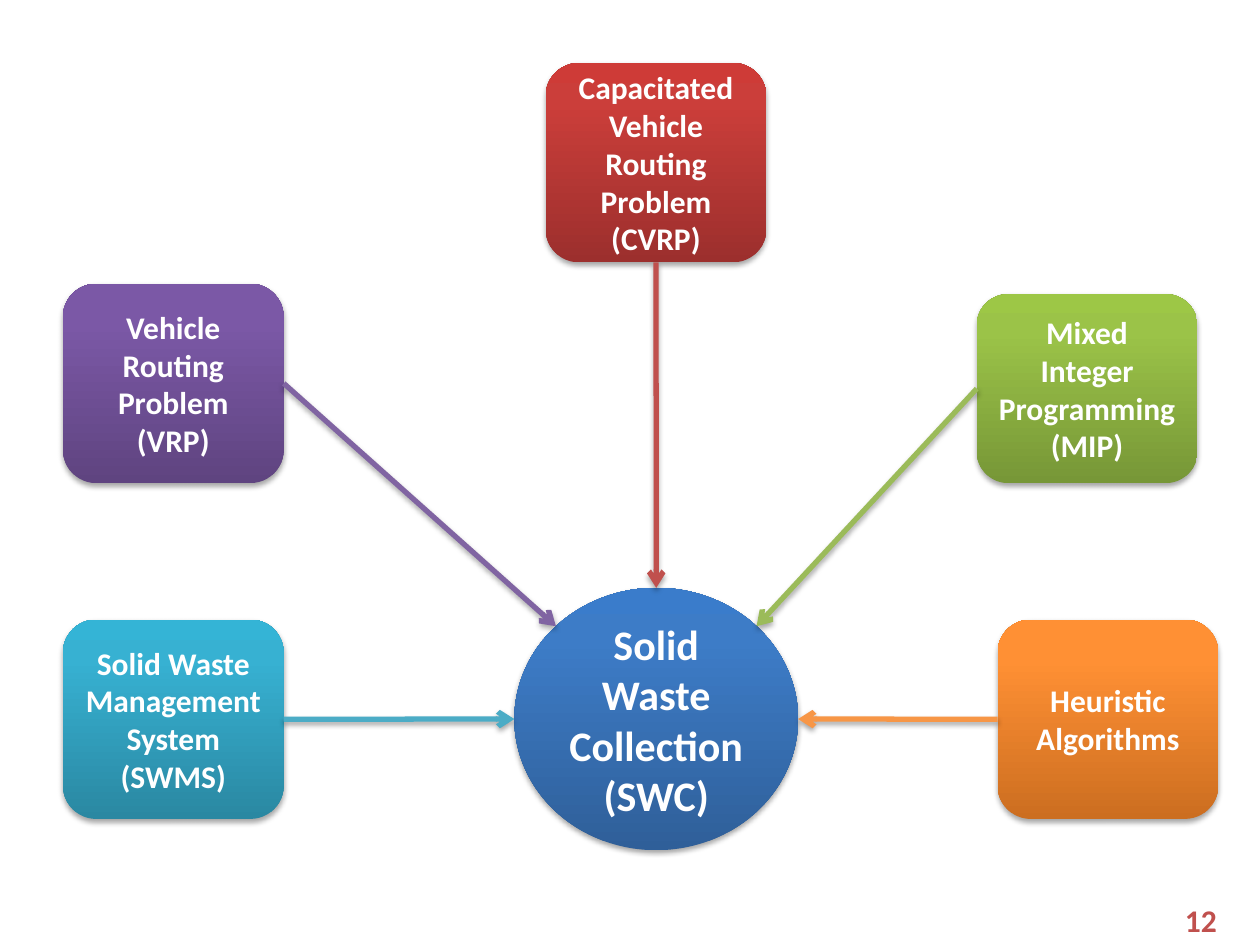
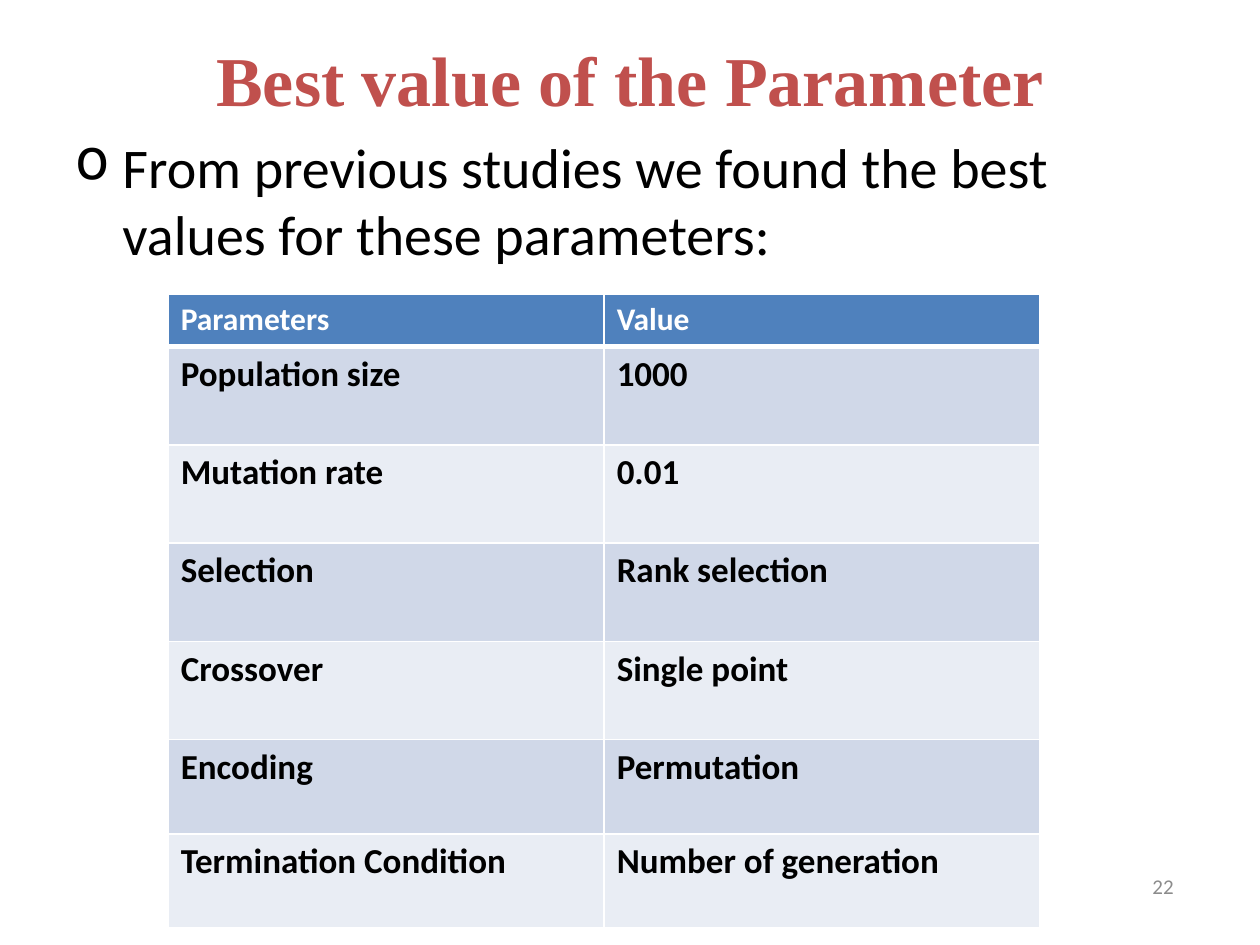
from copy import deepcopy
from math import cos, radians, sin

from lxml.etree import SubElement
from pptx import Presentation
from pptx.dml.color import RGBColor
from pptx.enum.shapes import MSO_CONNECTOR, MSO_SHAPE
from pptx.enum.text import MSO_ANCHOR, PP_ALIGN
from pptx.oxml.ns import qn
from pptx.util import Cm, Pt


# Theme: colours, fonts and type sizes
class Theme:
    body, heading = "Calibri", "Times New Roman"
    white, black, red, grey = "FFFFFF", "000000", "C0504D", "8C8C8C"
    header, bands = "4F81BD", ("D0D8E8", "E9EDF4")
    title, lead, hub, cell, node, small = 40, 32, 24, 20, 18, 12
    # Gradient from bottom to top
    stops = (0, 0.8, 1)
    blue = ("2F5F99", "3D7CC7", "3A7CCB")
    purple = ("5F4480", "7B58A6", "7C57A8")
    teal = ("2A88A2", "37B1D2", "34B4D6")
    crimson = ("9C2F2D", "CB3E3A", "CE3B37")
    green = ("779737", "9BC348", "9DC746")
    orange = ("CC6E20", "FF9034", "FF9136")


# Content: the diagram (lengths in cm)
TOP, LEFT, RIGHT = 0, 1, 3  # connection sites of a box
HUB = (["Solid Waste Collection", "(SWC)"], (10.37, 11.85, 5.72, 5.29))
BOX_W, BOX_H = 4.45, 4.02
# text, left, top, height, gradient, arrow colour, box site, angle on the hub
NODES = [
    (["Vehicle Routing Problem (VRP)"], 1.27, 5.72, BOX_H,
     Theme.purple, "8064A2", RIGHT, 225),
    (["Solid Waste Management System", "(SWMS)"], 1.27, 12.49, BOX_H,
     Theme.teal, "4BACC6", RIGHT, 180),
    (["Capacitated Vehicle Routing Problem", "(CVRP)"], 11, 1.27, BOX_H,
     Theme.crimson, Theme.red, 2, 270),
    (["Mixed Integer Programming(MIP)"], 19.69, 5.93, 3.81,
     Theme.green, "9BBB59", LEFT, 315),
    (["Heuristic Algorithms"], 20.11, 12.49, BOX_H,
     Theme.orange, "F79646", LEFT, 0),
]

# Content: the parameters
TITLE = "Best value of the Parameter"
LEAD = "From previous studies we found the best values for these parameters:"
ROWS = [
    ("Parameters", "Value"),
    ("Population size", "1000"),
    ("Mutation rate", "0.01"),
    ("Selection", "Rank selection"),
    ("Crossover", "Single point"),
    ("Encoding", "Permutation"),
    ("Termination Condition", "Number of generation"),
]
ROW_HEIGHTS = [1.06] + [1.98] * 4 + [1.9] * 2


def rgb(value):
    return RGBColor.from_string(value)


def write(tf, *lines, size=Theme.node, color=Theme.white, bold=False,
          font=Theme.body, align=PP_ALIGN.LEFT, anchor=MSO_ANCHOR.MIDDLE,
          bullet=None):
    """Fill a text frame with one paragraph per line."""
    tf.word_wrap = True
    tf.vertical_anchor = anchor
    for i, line in enumerate(lines):
        p = tf.paragraphs[0] if i == 0 else tf.add_paragraph()
        p.alignment = align
        if bullet:
            pPr = p._p.get_or_add_pPr()
            pPr.set("marL", str(Cm(0.95)))
            pPr.set("indent", str(-Cm(0.95)))
            SubElement(pPr, qn("a:buChar"), char=bullet)
        r = p.add_run()
        r.text = line
        r.font.name, r.font.size, r.font.bold = font, Pt(size), bold
        r.font.color.rgb = rgb(color)


def add_text(s, text, left, top, width, height, **fmt):
    tb = s.shapes.add_textbox(Cm(left), Cm(top), Cm(width), Cm(height))
    write(tb.text_frame, text, **fmt)


def add_page_number(s, number, left, top, **fmt):
    add_text(s, number, left, top, 5.93, 1.01, align=PP_ALIGN.RIGHT, **fmt)


def add_shadow(sp):
    spPr = sp._element.spPr
    effects = spPr.find(qn("a:effectLst"))
    if effects is None:
        effects = SubElement(spPr, qn("a:effectLst"))
    shadow = SubElement(effects, qn("a:outerShdw"), blurRad=str(Pt(3.1)),
                        dist=str(Pt(1.8)), dir="5400000", rotWithShape="0")
    color = SubElement(shadow, qn("a:srgbClr"), val=Theme.black)
    SubElement(color, qn("a:alpha"), val="35000")


def add_node(s, kind, lines, left, top, width, height, colors, size):
    sp = s.shapes.add_shape(kind, Cm(left), Cm(top), Cm(width), Cm(height))
    sp.fill.gradient()
    sp.fill.gradient_angle = 90
    gs_list = sp._element.spPr.find(".//" + qn("a:gsLst"))
    gs_list.append(deepcopy(gs_list[-1]))
    for stop, position, color in zip(sp.fill.gradient_stops, Theme.stops, colors):
        stop.position = position
        stop.color.rgb = rgb(color)
    sp.line.fill.background()
    sp.shadow.inherit = False
    add_shadow(sp)
    write(sp.text_frame, *lines, size=size, bold=True, align=PP_ALIGN.CENTER)
    return sp


def add_arrow(s, box, site, hub, angle, color):
    """Arrow from a side of the box to the rim of the hub."""
    rx, ry = hub.width / 2, hub.height / 2
    x = round(hub.left + rx + rx * cos(radians(angle)))
    y = round(hub.top + ry + ry * sin(radians(angle)))
    line = s.shapes.add_connector(MSO_CONNECTOR.STRAIGHT, x, y, x, y)
    line.begin_connect(box, site)
    line.line.color.rgb = rgb(color)
    line.line.width = Pt(3)
    SubElement(line.line._get_or_add_ln(), qn("a:tailEnd"), type="arrow")
    add_shadow(line)


def format_cell(cell, text, row):
    """Cell with white borders, thicker around the header's lower edge."""
    tcPr = cell._tc.get_or_add_tcPr()
    for side in "LRTB":
        thick = (row, side) in ((0, "B"), (1, "T"))
        ln = SubElement(tcPr, qn("a:ln" + side), w=str(Pt(3 if thick else 1)))
        fill = SubElement(ln, qn("a:solidFill"))
        SubElement(fill, qn("a:srgbClr"), val=Theme.white)
    cell.fill.solid()
    cell.fill.fore_color.rgb = rgb(Theme.bands[(row - 1) % 2] if row else Theme.header)
    write(cell.text_frame, text, bold=True,
          size=Theme.cell if row else Theme.node,
          color=Theme.black if row else Theme.white)
    cell.vertical_anchor = MSO_ANCHOR.TOP


def build_diagram(prs):
    s = prs.slides.add_slide(prs.slide_layouts[6])
    lines, frame = HUB
    hub = add_node(s, MSO_SHAPE.OVAL, lines, *frame, Theme.blue, Theme.hub)
    for lines, left, top, height, colors, color, site, angle in NODES:
        box = add_node(s, MSO_SHAPE.ROUNDED_RECTANGLE, lines, left, top,
                       BOX_W, height, colors, Theme.node)
        add_arrow(s, box, site, hub, angle, color)
    add_page_number(s, "12", 18.85, 18.03, color=Theme.red, bold=True)


def build_parameters(prs):
    s = prs.slides.add_slide(prs.slide_layouts[5])
    title = s.shapes.title
    title.left, title.top, title.width, title.height = Cm(1.27), Cm(0), Cm(22.86), Cm(3.18)
    write(title.text_frame, TITLE, size=Theme.title, color=Theme.red, bold=True,
          font=Theme.heading, align=PP_ALIGN.CENTER)
    add_text(s, LEAD, 1.27, 2.54, 22.86, 12.57, size=Theme.lead,
             color=Theme.black, anchor=MSO_ANCHOR.TOP, bullet="o")
    add_page_number(s, "22", 17.98, 17.35, size=Theme.small, color=Theme.grey)

    # Parameter table
    table = s.shapes.add_table(len(ROWS), 2, Cm(3.39), Cm(5.93), Cm(17.58),
                               Cm(sum(ROW_HEIGHTS))).table
    for i, (values, height) in enumerate(zip(ROWS, ROW_HEIGHTS)):
        table.rows[i].height = Cm(height)
        for j, value in enumerate(values):
            format_cell(table.cell(i, j), value, i)


def main():
    prs = Presentation()
    prs.slide_width, prs.slide_height = Cm(25.4), Cm(19.05)
    build_diagram(prs)
    build_parameters(prs)
    prs.save("out.pptx")


if __name__ == "__main__":
    main()
